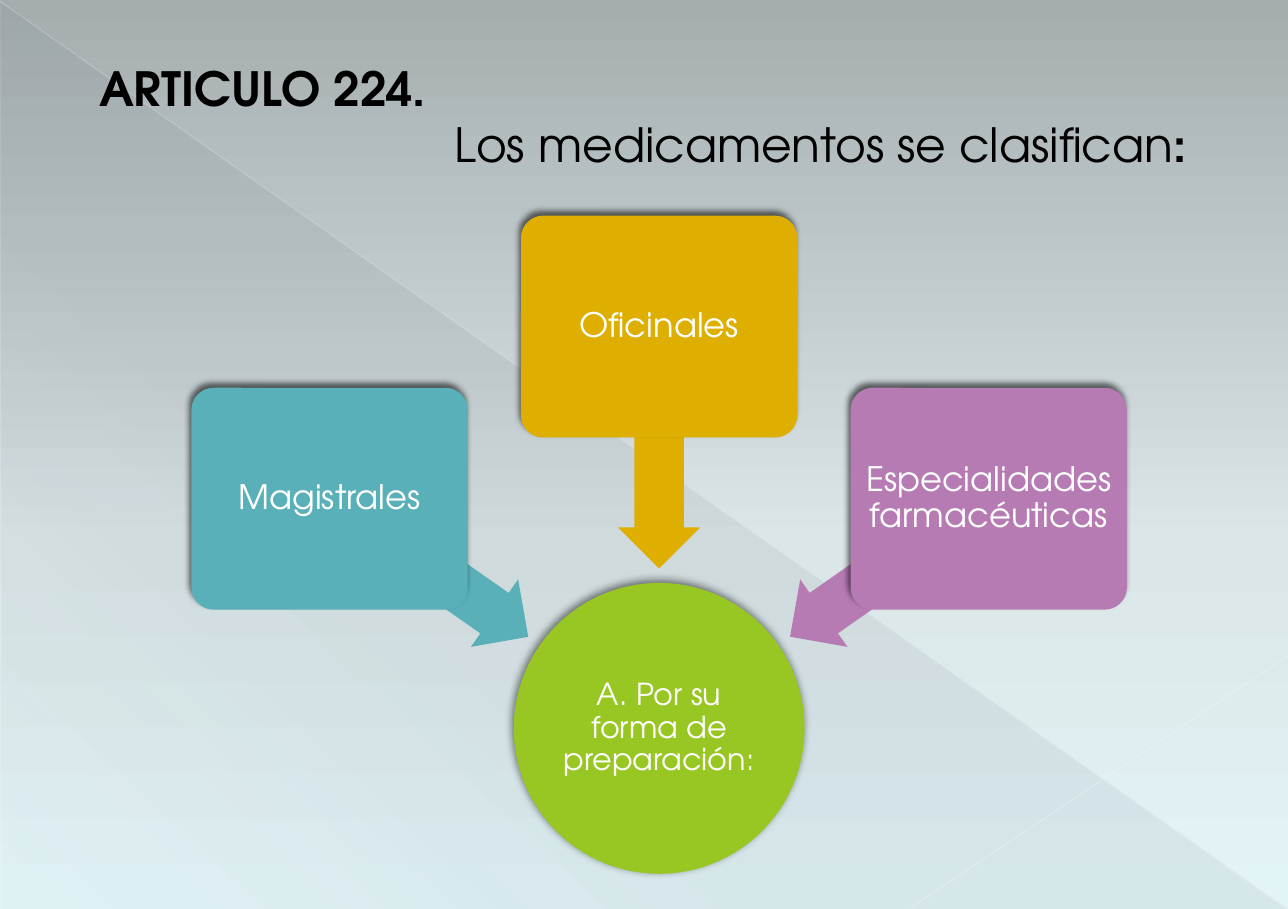
from lxml import etree
from pptx import Presentation
from pptx.dml.color import RGBColor
from pptx.enum.shapes import MSO_CONNECTOR, MSO_SHAPE
from pptx.enum.text import MSO_ANCHOR, PP_ALIGN
from pptx.oxml.ns import qn
from pptx.util import Inches, Pt

CENTER, JUSTIFY, RIGHT = PP_ALIGN.CENTER, PP_ALIGN.JUSTIFY, PP_ALIGN.RIGHT
TOP, MIDDLE = MSO_ANCHOR.TOP, MSO_ANCHOR.MIDDLE
ELLIPSE, ROUNDED = MSO_SHAPE.OVAL, MSO_SHAPE.ROUNDED_RECTANGLE
ARROW, TRIANGLE = MSO_SHAPE.LEFT_ARROW, MSO_SHAPE.RIGHT_TRIANGLE
STRAIGHT = MSO_CONNECTOR.STRAIGHT

FONT = "TeX Gyre Adventor"
COLORS = {
    "sky_top": "A5ADAF", "sky_middle": "DBE6E8", "sky_bottom": "E3F4F7",
    "veil": "5B6973", "long_ray": "F1F6F7", "short_ray": "F2F7F8",
    "black": "000000", "white": "FFFFFF", "green": "98C723",
    "teal": "59B0B9", "gold": "DEAE00", "purple": "B77BB4",
}


def add_color(parent, color, opacity=100):
    node = etree.SubElement(parent, qn("a:srgbClr"), val=COLORS[color])
    if opacity < 100:
        etree.SubElement(node, qn("a:alpha"), val=str(opacity * 1000))


def set_gradient(fill, owner, stops, angle):
    """Fill with (position, color, opacity) stops, angle clockwise."""
    fill.gradient()
    gradient = owner.find(".//" + qn("a:gradFill"))
    stop_list = gradient.find(qn("a:gsLst"))
    for old_stop in list(stop_list):
        stop_list.remove(old_stop)
    for position, color, opacity in stops:
        stop = etree.SubElement(stop_list, qn("a:gs"), pos=str(position * 1000))
        add_color(stop, color, opacity)
    gradient.find(qn("a:lin")).set("ang", str(angle * 60000))


def write_text(shape, paragraphs, size, color="black", anchor=TOP, inset=None,
               spacing=None):
    """Write paragraphs given as (alignment, [(words, bold), ...])."""
    frame = shape.text_frame
    frame.word_wrap = True
    frame.vertical_anchor = anchor
    if inset is not None:
        frame.margin_left = frame.margin_right = Inches(inset)
        frame.margin_top = frame.margin_bottom = Inches(inset)
    for index, (alignment, runs) in enumerate(paragraphs):
        paragraph = frame.add_paragraph() if index else frame.paragraphs[0]
        paragraph.alignment = alignment
        if spacing:
            paragraph.line_spacing = spacing
        for words, bold in runs:
            run = paragraph.add_run()
            run.text = words
            run.font.name = FONT
            run.font.size = Pt(size)
            run.font.bold = bold
            run.font.color.rgb = RGBColor.from_string(COLORS[color])


class SlideBuilder:
    def __init__(self, slide):
        self.slide = slide

    def background(self, stops, angle):
        set_gradient(self.slide.background.fill, self.slide.element, stops, angle)

    def shape(self, kind, box, color=None, adjustments=(), rotation=0):
        shape = self.slide.shapes.add_shape(kind, *map(Inches, box))
        shape.shadow.inherit = False
        shape.line.fill.background()
        shape.rotation = rotation
        for index, value in enumerate(adjustments):
            shape.adjustments[index] = value
        if color:
            shape.fill.solid()
            shape.fill.fore_color.rgb = RGBColor.from_string(COLORS[color])
        return shape

    def veil(self, box, stops, angle):
        triangle = self.shape(TRIANGLE, box)
        set_gradient(triangle.fill, triangle.element, stops, angle)

    def ray(self, start, end, color, width, opacity):
        ray = self.slide.shapes.add_connector(STRAIGHT, *map(Inches, start + end))
        ray.line.width = Pt(width)
        ray.line.fill.solid()
        ray.line.color.rgb = RGBColor.from_string(COLORS[color])
        solid = ray.line._ln.find(qn("a:solidFill"))
        solid.clear()
        add_color(solid, color, opacity)
        etree.SubElement(ray.element.spPr, qn("a:effectLst"))

    def title(self, box, paragraphs):
        title = self.slide.shapes.add_textbox(*map(Inches, box))
        write_text(title, paragraphs, 28)

    def card(self, kind, box, color, words, size, inset, shadow, adjustments=()):
        card = self.shape(kind, box, color, adjustments)
        opacity, blur, distance = shadow
        effects = card.element.spPr.find(qn("a:effectLst"))
        outer = etree.SubElement(
            effects, qn("a:outerShdw"), blurRad=str(Pt(blur)),
            dist=str(Pt(distance)), dir=str(245 * 60000), rotWithShape="0")
        add_color(outer, "black", opacity)
        write_text(card, [(CENTER, [(words, False)])], size, "white", MIDDLE,
                   inset, 0.9)


def main():
    deck = Presentation()
    deck.slide_width, deck.slide_height = Inches(10.63), Inches(7.5)
    builder = SlideBuilder(deck.slides.add_slide(deck.slide_layouts[6]))

    # Backdrop
    builder.background([(0, "sky_top", 100), (60, "sky_middle", 100),
                        (100, "sky_bottom", 100)], 90)
    builder.veil((0.01, 0.02, 10.62, 7.48),
                 [(0, "veil", 10), (70, "veil", 8), (100, "veil", 1)], 133)
    builder.ray((0, 0.01), (10.62, 7.49), "long_ray", 0.39, 35)
    builder.ray((10.63, 5.41), (7.52, 7.49), "short_ray", 0.47, 45)

    # Title
    builder.title((0.72, 0.44, 9.17, 1.04), [
        (JUSTIFY, [("ARTICULO 224.", True)]),
        (RIGHT, [("Los medicamentos se clasifican", False), (":", True)]),
    ])

    # Central criterion
    builder.card(ELLIPSE, (4.24, 4.81, 2.4, 2.4), "green",
                 "A. Por su forma de preparación:", 18, 0.01, (50, 5, 2))

    # Classes, each with an arrow to the criterion
    classes = [
        ("Magistrales", "teal", 3.2, 4.34, 215),
        ("Oficinales", "gold", 1.78, 3.35, 270),
        ("Especialidades farmacéuticas", "purple", 3.2, 4.34, 325),
    ]
    for column, (name, color, top, arrow_top, rotation) in enumerate(classes):
        builder.shape(ARROW, (2.54 + 1.9 * column, arrow_top, 2, 0.68), color,
                      (0.6, 0.5), rotation)
        builder.card(ROUNDED, (1.58 + 2.72 * column, top, 2.28, 1.83), color,
                     name, 20, 0.04, (60, 4, 3), (0.1,))

    deck.save("out.pptx")


if __name__ == "__main__":
    main()
